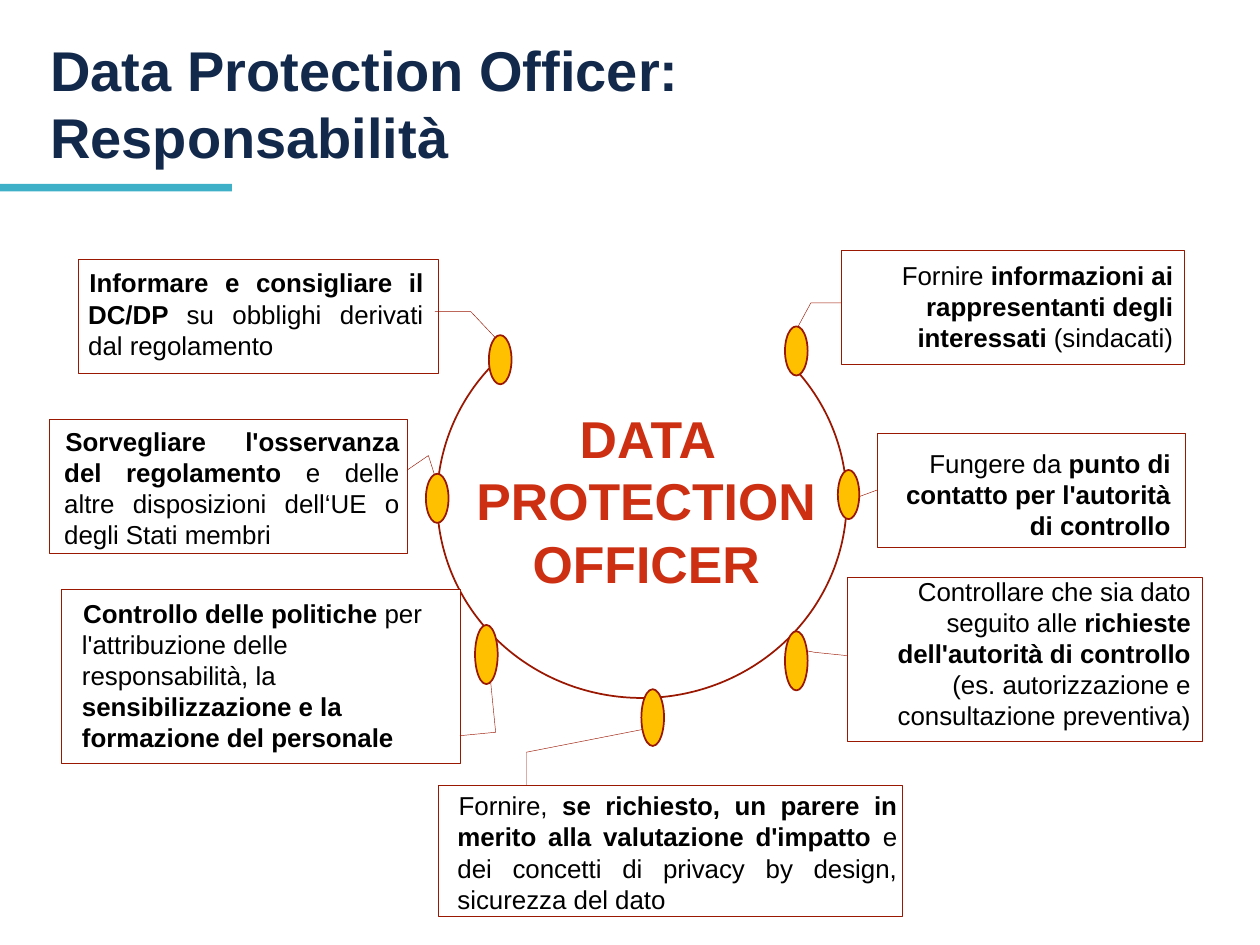
from pptx import Presentation
from pptx.dml.color import RGBColor
from pptx.enum import shapes, text
from pptx.util import Inches, Pt

HUES = {"navy": "13294B", "teal": "3EB1C8", "rust": "9A1702", "gold": "FFC000",
        "red": "CD2F12", "white": "FFFFFF", "black": "000000"}
KIND = shapes.MSO_SHAPE
SIDE = text.PP_ALIGN
LEFT, MID, RIGHT, FULL = SIDE.LEFT, SIDE.CENTER, SIDE.RIGHT, SIDE.JUSTIFY

deck = Presentation()
deck.slide_width, deck.slide_height = Inches(10), Inches(7.5)
page = deck.slides.add_slide(deck.slide_layouts[6])


def draw(kind, spot, fill=None, width=None, adj=()):
    item = page.shapes.add_shape(kind, *map(Inches, spot))
    item.shadow.inherit = False
    for num, val in enumerate(adj):
        item.adjustments[num] = val
    if fill:
        item.fill.solid()
        item.fill.fore_color.rgb = RGBColor.from_string(HUES[fill])
    else:
        item.fill.background()
    if width:
        item.line.color.rgb = RGBColor.from_string(HUES["rust"])
        item.line.width = Pt(width)
    else:
        item.line.fill.background()


def write(spot, parts, size, hue, align, inset, indent=True):
    box = page.shapes.add_textbox(*map(Inches, spot))
    frame = box.text_frame
    form = {"word_wrap": True, "margin_left": Inches(inset), "margin_right": Inches(inset),
            "margin_top": Inches(inset), "margin_bottom": Inches(inset)}
    for key, val in form.items():
        setattr(frame, key, val)
    para = frame.paragraphs[0]
    para.alignment = align
    if indent:
        props = para._p.get_or_add_pPr()
        props.set("marL", str(Inches(0.12)))
        props.set("indent", str(Inches(0.01)))
    for num, part in enumerate(parts.split("*")):
        if part:
            run = para.add_run()
            run.text = part
            for key, val in {"name": "Arial", "size": Pt(size), "bold": num % 2 == 1}.items():
                setattr(run.font, key, val)
            run.font.color.rgb = RGBColor.from_string(HUES[hue])
    return frame


draw(KIND.RECTANGLE, (0, 1.46, 1.84, 0.06), "teal")
title = write((0.3, 0.32, 8.12, 1.08), "*Data Protection Officer: Responsabilità*",
              32, "navy", LEFT, 0.1, False)
for key, val in {"vertical_anchor": text.MSO_ANCHOR.BOTTOM, "margin_top": Inches(0),
                 "margin_bottom": Inches(0.05)}.items():
    setattr(title, key, val)

draw(KIND.ARC, (3.47, 2.4, 3.25, 3.14), None, 1, (316 * 0.6, 225 * 0.6))

duties = [
    ((0.62, 2.06, 2.86, 0.9), (0.46, 0.99, 0.46, 1.09, 0.73, 1.17),
     (3.88, 2.66, 0.18, 0.39), (0.49, 2.03, 2.96, 0.93), FULL,
     "*Informare e consigliare il DC/DP *su obblighi derivati dal regolamento"),
    ((0.39, 3.33, 2.84, 1.06), (0.38, 1, 0.27, 1.06, 0.44, 1.08),
     (3.38, 3.76, 0.18, 0.39), (0.3, 3.29, 2.96, 1.18), FULL,
     "*Sorvegliare l'osservanza del regolamento *e delle altre disposizioni "
     "dell‘UE o degli Stati membri"),
    ((0.49, 4.68, 3.16, 1.38), (0.84, 1, 0.82, 1.09, 0.36, 1.07),
     (3.77, 4.96, 0.18, 0.47), (0.44, 4.65, 3.21, 1.42), LEFT,
     "*Controllo delle politiche *per l'attribuzione delle responsabilità, la "
     "*sensibilizzazione e la formazione del personale*"),
    ((3.48, 6.23, 3.68, 1.04), (0, 0.19, -0.25, 0.19, -0.43, 0.45),
     (5.09, 5.47, 0.18, 0.45), (3.42, 6.18, 3.79, 1.18), FULL,
     "Fornire, *se richiesto, un parere in merito alla valutazione d'impatto "
     "*e dei concetti di privacy by design, sicurezza del dato"),
    ((6.68, 1.99, 2.72, 0.9), (0.46, 0, 0.46, -0.09, 0.74, -0.14),
     (6.23, 2.59, 0.18, 0.39), (6.44, 1.97, 2.96, 0.93), RIGHT,
     "Fornire *informazioni ai rappresentanti degli interessati *(sindacati)"),
    ((6.96, 3.44, 2.45, 0.9), (0.5, 0, 0.5, 0, 0.57, -0.07),
     (6.65, 3.73, 0.17, 0.39), (6.83, 3.46, 2.55, 0.93), RIGHT,
     "Fungere da *punto di contatto per l'autorità di controllo*"),
    ((6.72, 4.58, 2.82, 1.3), (0.48, 0, 0.46, -0.09, 0.44, -0.14),
     (6.23, 5.01, 0.18, 0.47), (6.58, 4.48, 2.96, 1.42), RIGHT,
     "Controllare che sia dato seguito alle *richieste dell'autorità di controllo "
     "*(es. autorizzazione e consultazione preventiva)"),
]
for frame, lead, knob, spot, align, words in duties:
    draw(KIND.LINE_CALLOUT_2, frame, "white", 0.25, lead)
    draw(KIND.OVAL, knob, "gold", 1)
    write(spot, words, 14.8, "black", align, 0.09)

write((3.59, 3.23, 2.96, 1.49), "*DATA PROTECTION OFFICER*", 29.6, "red", MID, 0)

deck.save("out.pptx")
